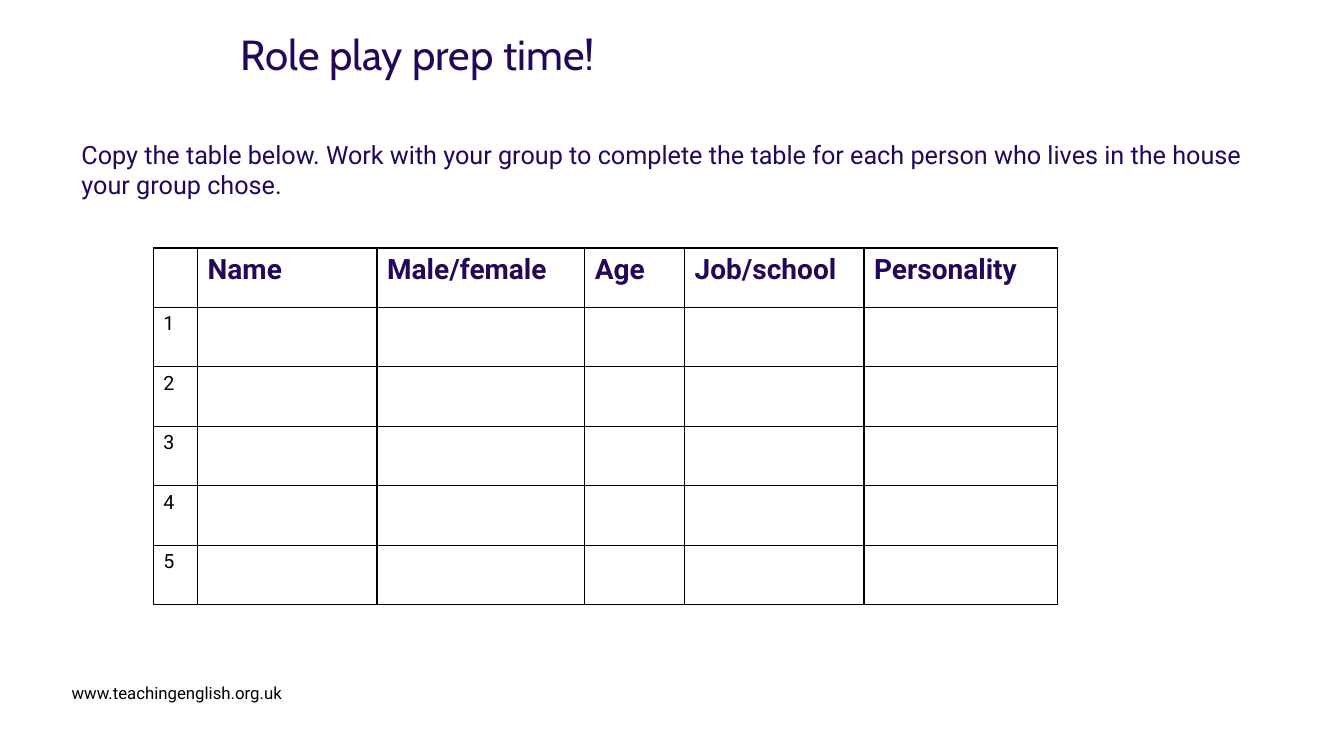
import pptx
import pptx.dml.color
import pptx.enum.text
import pptx.oxml
import pptx.oxml.ns
import pptx.util

Inches = pptx.util.Inches
Pt = pptx.util.Pt
RGBColor = pptx.dml.color.RGBColor
ANCHOR = pptx.enum.text.MSO_ANCHOR

TITLE_PURPLE = RGBColor(0x23, 0x08, 0x59)
PURPLE = RGBColor(0x23, 0x08, 0x5A)
BLACK = RGBColor(0, 0, 0)

TITLE_FORMAT = {"name": "Cabin", "size": Pt(30), "bold": False}
BODY_FORMAT = {"name": "Roboto", "size": Pt(18), "bold": False}
HEADER_FORMAT = {"name": "Roboto", "size": Pt(20), "bold": True}
NUMBER_FORMAT = {"name": "Roboto", "size": Pt(14), "bold": False}
FOOTER_FORMAT = {"name": "Roboto", "size": Pt(12), "bold": False}

HEADERS = ["", "Name", "Male/female", "Age", "Job/school", "Personality"]
COLUMN_WIDTHS = [0.44, 1.78, 2.06, 0.99, 1.78, 1.92]
PERSON_COUNT = 5


def write_text(frame, text, font_format, color):
    """Fill the first paragraph of a frame with one formatted span."""
    para = frame.paragraphs[0]
    para.alignment = pptx.enum.text.PP_ALIGN.LEFT
    span = para.add_run()
    span.text = text
    for name, value in font_format.items():
        setattr(span.font, name, value)
    span.font.color.rgb = color
    return para


def set_frame(frame, anchor, margin=None):
    frame.word_wrap = True
    frame.auto_size = pptx.enum.text.MSO_AUTO_SIZE.NONE
    frame.vertical_anchor = anchor
    if margin is not None:
        for side in ("left", "top", "right", "bottom"):
            setattr(frame, f"margin_{side}", margin)


def add_title(page, left, top, width, height):
    title = page.shapes.title
    title.left, title.top = Inches(left), Inches(top)
    title.width, title.height = Inches(width), Inches(height)
    set_frame(title.text_frame, ANCHOR.TOP, 0)
    para = write_text(title.text_frame, "Role play prep time!", TITLE_FORMAT, TITLE_PURPLE)
    para.line_spacing = Pt(33)


def add_instruction(page, left, top, width, height):
    box = page.shapes.add_textbox(*map(Inches, (left, top, width, height)))
    set_frame(box.text_frame, ANCHOR.TOP)
    write_text(
        box.text_frame,
        "Copy the table below. Work with your group to complete the table "
        "for each person who lives in the house your group chose.",
        BODY_FORMAT,
        PURPLE,
    )


def add_footer(page, left, top, width, height):
    box = page.shapes.add_textbox(*map(Inches, (left, top, width, height)))
    set_frame(box.text_frame, ANCHOR.BOTTOM, 0)
    write_text(box.text_frame, "www.teachingenglish.org.uk", FOOTER_FORMAT, BLACK)


def set_borders(cell, color, width):
    """Draw all four edges of a cell; edges come before the fill."""
    properties = cell._tc.get_or_add_tcPr()
    for position, edge in enumerate(("lnL", "lnR", "lnT", "lnB")):
        line = pptx.oxml.parse_xml(
            f'<a:{edge} {pptx.oxml.ns.nsdecls("a")} w="{width}">'
            f'<a:solidFill><a:srgbClr val="{color}"/></a:solidFill></a:{edge}>'
        )
        properties.insert(position, line)


def add_people_table(page, left, top, width, height):
    row_count = PERSON_COUNT + 1
    box = page.shapes.add_table(
        row_count, len(HEADERS), *map(Inches, (left, top, width, height))
    )
    table = box.table
    table.first_row = table.horz_banding = False

    for column, share in zip(table.columns, COLUMN_WIDTHS):
        column.width = Inches(width * share / sum(COLUMN_WIDTHS))
    for row in table.rows:
        row.height = Inches(height / row_count)

    for cell in table.iter_cells():
        cell.fill.background()
        set_borders(cell, BLACK, Pt(1))

    # Header row, then a number for each person
    for column, header in enumerate(HEADERS):
        if header:
            write_text(table.cell(0, column).text_frame, header, HEADER_FORMAT, PURPLE)
    for number in range(1, row_count):
        write_text(table.cell(number, 0).text_frame, str(number), NUMBER_FORMAT, BLACK)


def main():
    deck = pptx.Presentation()
    deck.slide_width, deck.slide_height = Inches(13.33), Inches(7.5)
    page = deck.slides.add_slide(deck.slide_layouts.get_by_name("Title Only"))

    add_title(page, 2.39, 0.32, 10.94, 0.87)
    add_footer(page, 0.71, 6.77, 11.42, 0.2)
    add_instruction(page, 0.71, 1.33, 11.97, 0.71)
    add_people_table(page, 1.52, 2.46, 8.97, 3.54)

    deck.save("out.pptx")


if __name__ == "__main__":
    main()
